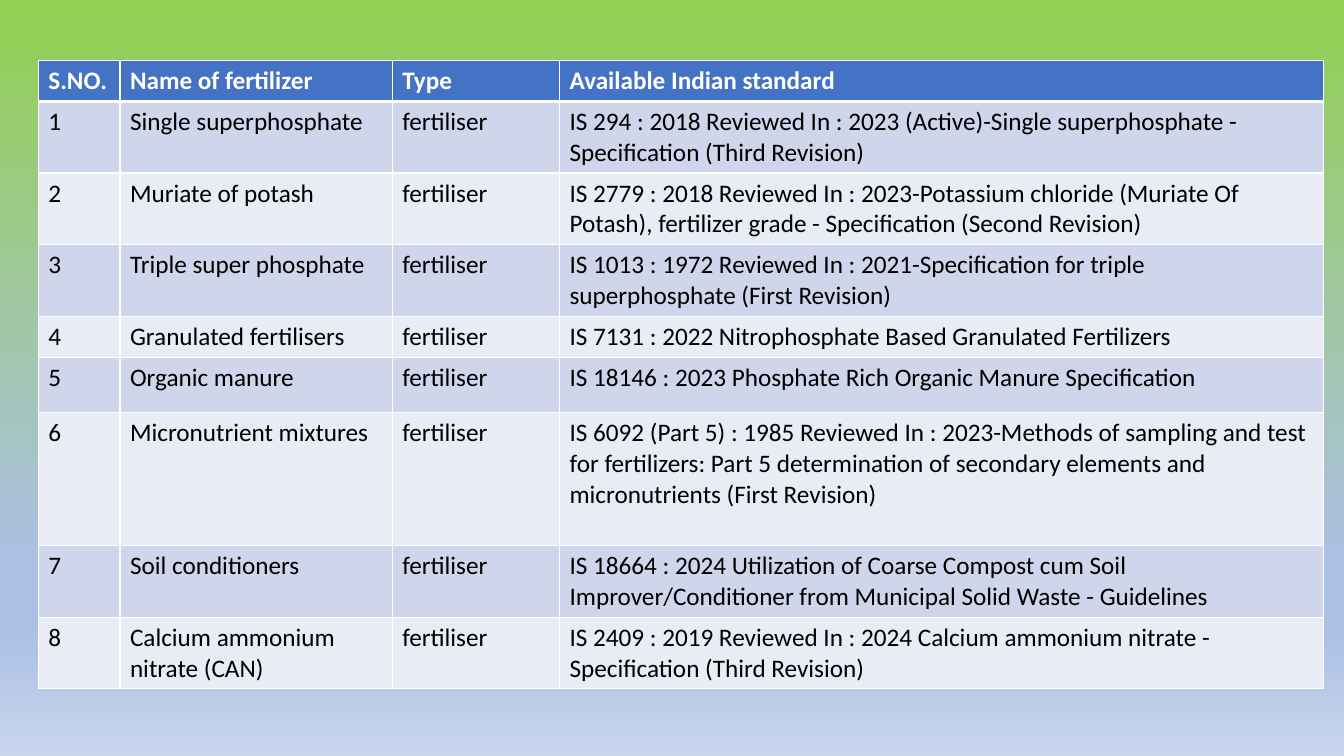
import pptx
import pptx.util
import pptx.dml.color
import pptx.oxml.ns
import lxml.etree

Inches = pptx.util.Inches
qn = pptx.oxml.ns.qn

COLORS = {
    "header": "4472C4", "odd": "CFD5EA", "even": "E9EBF5",
    "white": "FFFFFF", "black": "000000",
}
BACKGROUND_STOPS = [(0, "92D050"), (74, "ABC0E4"), (83, "ABC0E4"), (100, "C7D5ED")]

HEADINGS = ["S.NO.", "Name of fertilizer", "Type", "Available Indian standard"]
FERTILIZERS = [
    ("Single superphosphate",
     "IS 294 : 2018 Reviewed In : 2023 (Active)-Single superphosphate - "
     "Specification (Third Revision)"),
    ("Muriate of potash",
     "IS 2779 : 2018 Reviewed In : 2023-Potassium chloride (Muriate Of Potash), "
     "fertilizer grade - Specification (Second Revision)"),
    ("Triple super phosphate",
     "IS 1013 : 1972 Reviewed In : 2021-Specification for triple superphosphate "
     "(First Revision)"),
    ("Granulated fertilisers",
     "IS 7131 : 2022 Nitrophosphate Based Granulated Fertilizers"),
    ("Organic manure",
     "IS 18146 : 2023 Phosphate Rich Organic Manure Specification"),
    ("Micronutrient mixtures",
     "IS 6092 (Part 5) : 1985 Reviewed In : 2023-Methods of sampling and test for "
     "fertilizers: Part 5 determination of secondary elements and micronutrients "
     "(First Revision)"),
    ("Soil conditioners",
     "IS 18664 : 2024 Utilization of Coarse Compost cum Soil Improver/Conditioner "
     "from Municipal Solid Waste - Guidelines"),
    ("Calcium ammonium nitrate (CAN)",
     "IS 2409 : 2019 Reviewed In : 2024 Calcium ammonium nitrate - Specification "
     "(Third Revision)"),
]
COLUMN_WIDTHS = [0.81, 2.7, 1.66, 7.58]
ROW_HEIGHTS = [0.4, 0.71, 0.71, 0.71, 0.4, 0.55, 1.32, 0.71, 0.71]


def rgb(name):
    return pptx.dml.color.RGBColor.from_string(COLORS[name])


def add_solid_color(parent, value):
    lxml.etree.SubElement(parent, qn("a:srgbClr"), val=value)


def paint_background(page):
    fill = page.background.fill
    fill.gradient()
    fill.gradient_angle = 270
    stops = page.element.find(".//" + qn("a:gsLst"))
    for stop in list(stops):
        stops.remove(stop)
    for percent, value in BACKGROUND_STOPS:
        stop = lxml.etree.SubElement(stops, qn("a:gs"), pos=str(percent * 1000))
        add_solid_color(stop, value)


def set_borders(cell, top, bottom):
    properties = cell._tc.get_or_add_tcPr()
    for side, points in (("L", 1), ("R", 1), ("T", top), ("B", bottom)):
        line = lxml.etree.SubElement(
            properties, qn("a:ln" + side), w=str(pptx.util.Pt(points)))
        add_solid_color(lxml.etree.SubElement(line, qn("a:solidFill")), COLORS["white"])


def fill_cell(cell, text, row):
    is_header = row == 0
    # The rule below the header is thicker than the others
    set_borders(cell, top=3 if row == 1 else 1, bottom=3 if is_header else 1)
    cell.fill.solid()
    cell.fill.fore_color.rgb = rgb("header" if is_header else "odd" if row % 2 else "even")
    span = cell.text_frame.paragraphs[0].add_run()
    span.text = text
    span.font.name = "Calibri"
    span.font.size = pptx.util.Pt(18)
    span.font.bold = is_header
    span.font.color.rgb = rgb("white" if is_header else "black")


def add_standards_table(page):
    rows = [HEADINGS] + [
        (str(number), name, "fertiliser", standard)
        for number, (name, standard) in enumerate(FERTILIZERS, 1)]
    table = page.shapes.add_table(
        len(rows), len(HEADINGS), Inches(0.38), Inches(0.6),
        Inches(sum(COLUMN_WIDTHS)), Inches(sum(ROW_HEIGHTS))).table
    for column, width in zip(table.columns, COLUMN_WIDTHS):
        column.width = Inches(width)
    for row, height in zip(table.rows, ROW_HEIGHTS):
        row.height = Inches(height)
    for row, texts in enumerate(rows):
        for column, text in enumerate(texts):
            fill_cell(table.cell(row, column), text, row)


def main():
    deck = pptx.Presentation()
    deck.slide_width = Inches(13.33)
    deck.slide_height = Inches(7.5)
    page = deck.slides.add_slide(deck.slide_layouts[6])  # Blank layout
    paint_background(page)
    add_standards_table(page)
    deck.save("out.pptx")


if __name__ == "__main__":
    main()
